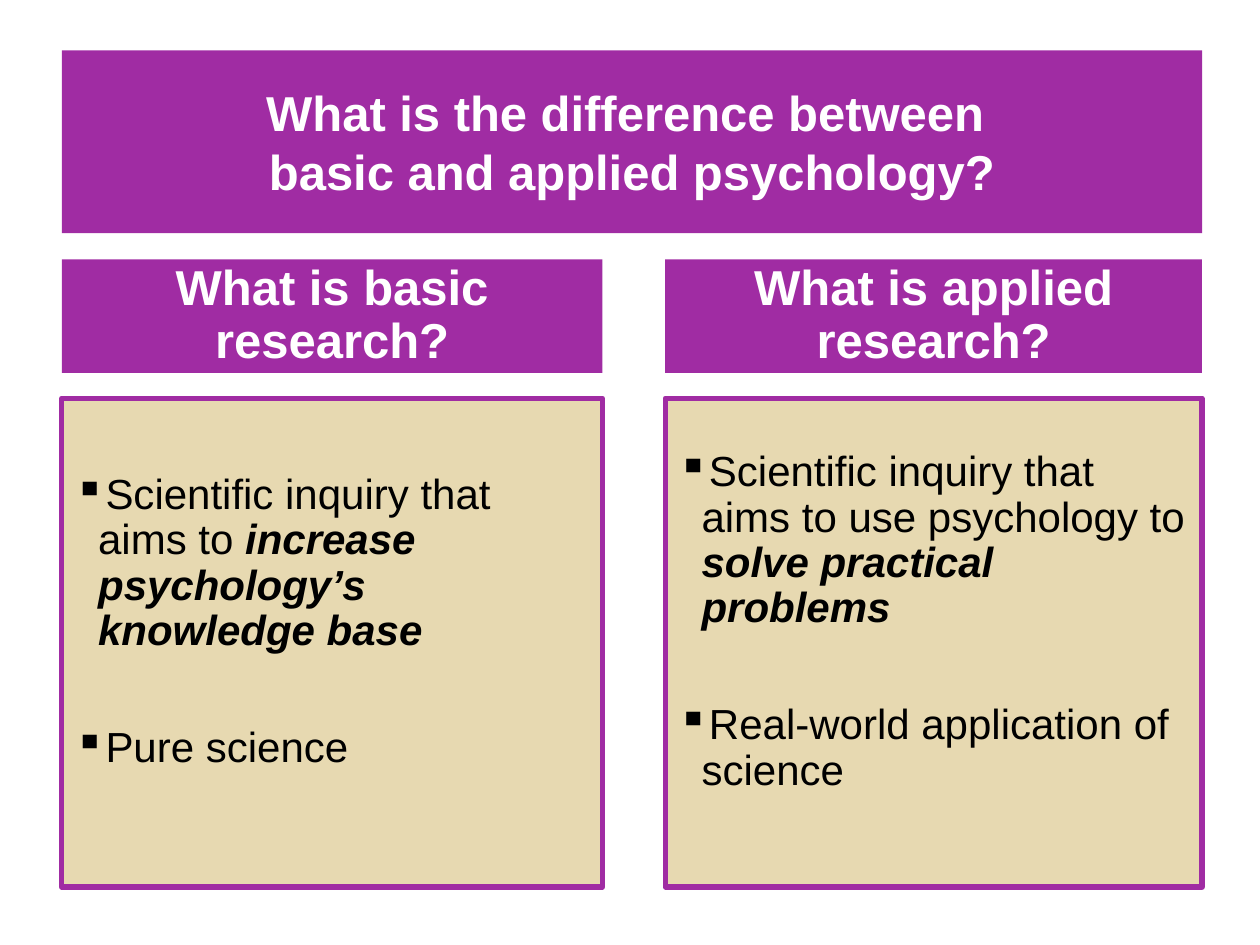
"""Build a slide comparing basic and applied psychology research."""
import pptx
import pptx.dml.color
import pptx.enum.shapes
import pptx.enum.text
import pptx.util
from lxml import etree
from pptx.util import Inches, Pt

PURPLE, SAND, WHITE, BLACK = "A02CA3", "E7D9B1", "FFFFFF", "000000"
QUESTION = ["What is the difference between ", "basic and applied psychology?"]
COLUMNS = [
    {"left": 0.49, "width": 4.29, "heading": "What is basic research?",
     "points": [[("Scientific inquiry that aims to ", False),
                 ("increase psychology’s knowledge base", True)],
                [("Pure science", False)]]},
    {"left": 5.28, "width": 4.26, "heading": "What is applied research?",
     "points": [[("Scientific inquiry that aims to use psychology to ", False),
                 ("solve practical problems", True)],
                [("Real-world application of science", False)]]},
]
HEADING_TOP, HEADING_HEIGHT = 2.06, 0.9
PANEL_TOP, PANEL_HEIGHT = 3.16, 3.88
INDENT = 0.19


def rgb(value):
    return pptx.dml.color.RGBColor.from_string(value)


def paint(shape, color):
    shape.fill.solid()
    shape.fill.fore_color.rgb = rgb(color)


def style(run, size, color, bold=False, italic=False):
    run.font.name = "Arial"
    run.font.size = Pt(size)
    run.font.color.rgb = rgb(color)
    run.font.bold = bold
    run.font.italic = italic


def prepare(frame, top=0.05, bottom=0.05):
    frame.word_wrap = True
    frame.auto_size = pptx.enum.text.MSO_AUTO_SIZE.NONE
    frame.vertical_anchor = pptx.enum.text.MSO_ANCHOR.MIDDLE
    frame.margin_top, frame.margin_bottom = Inches(top), Inches(bottom)


def write_centred(frame, lines, spacing):
    frame.text = "\n".join(lines)
    for paragraph in frame.paragraphs:
        paragraph.alignment = pptx.enum.text.PP_ALIGN.CENTER
        paragraph.line_spacing = spacing
        for run in paragraph.runs:
            style(run, 28, WHITE, bold=True)


def add_bullet(paragraph):
    properties = paragraph._p.get_or_add_pPr()
    properties.set("marL", str(Inches(INDENT)))
    properties.set("indent", str(-Inches(INDENT)))
    bullet = etree.SubElement(properties, pptx.oxml.ns.qn("a:buChar"))
    bullet.set("char", "▪")


def add_box(slide, left, top, width, height, color):
    box = slide.shapes.add_shape(
        pptx.enum.shapes.MSO_SHAPE.RECTANGLE,
        Inches(left), Inches(top), Inches(width), Inches(height))
    box.shadow.inherit = False
    paint(box, color)
    box.line.fill.background()
    return box


def add_column(slide, column):
    left, width = column["left"], column["width"]
    heading = add_box(slide, left, HEADING_TOP, width, HEADING_HEIGHT, PURPLE)
    prepare(heading.text_frame, 0.02, 0.02)
    write_centred(heading.text_frame, [column["heading"]], 0.9)

    panel = add_box(slide, left, PANEL_TOP, width, PANEL_HEIGHT, SAND)
    panel.line.color.rgb = rgb(PURPLE)
    panel.line.width = Pt(3)
    frame = panel.text_frame
    prepare(frame, bottom=0.37)
    for index, point in enumerate(column["points"]):
        paragraph = frame.add_paragraph() if index else frame.paragraphs[0]
        add_bullet(paragraph)
        paragraph.alignment = pptx.enum.text.PP_ALIGN.LEFT
        paragraph.line_spacing = 0.9
        paragraph.space_before = Pt(41 if index else 0)
        for words, stressed in point:
            run = paragraph.add_run()
            run.text = words
            style(run, 24, BLACK, bold=stressed, italic=stressed)


def main():
    deck = pptx.Presentation()
    deck.slide_width, deck.slide_height = Inches(10), Inches(7.5)
    slide = deck.slides.add_slide(deck.slide_layouts[5])
    question = slide.shapes.title
    question.left, question.top = Inches(0.49), Inches(0.4)
    question.width, question.height = Inches(9.05), Inches(1.45)
    paint(question, PURPLE)
    prepare(question.text_frame)
    write_centred(question.text_frame, QUESTION, 1.0)
    for column in COLUMNS:
        add_column(slide, column)
    deck.save("out.pptx")


if __name__ == "__main__":
    main()
